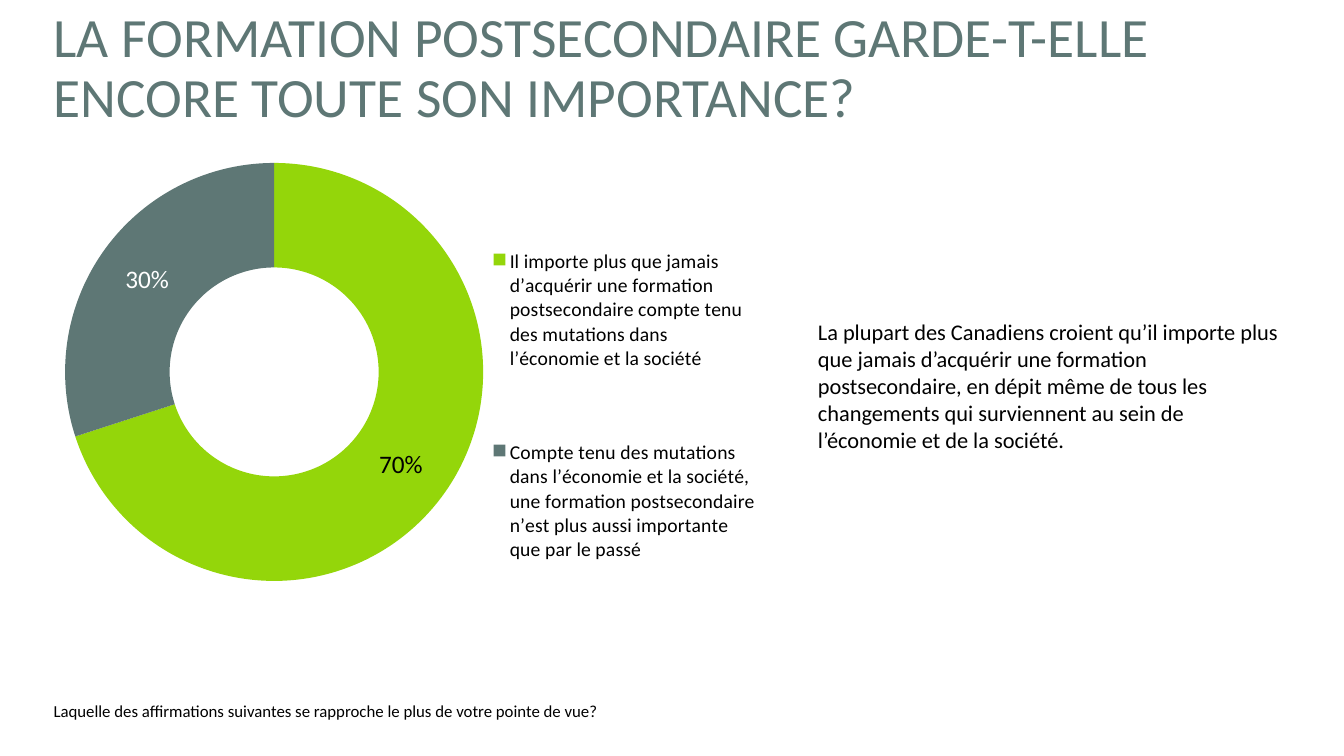
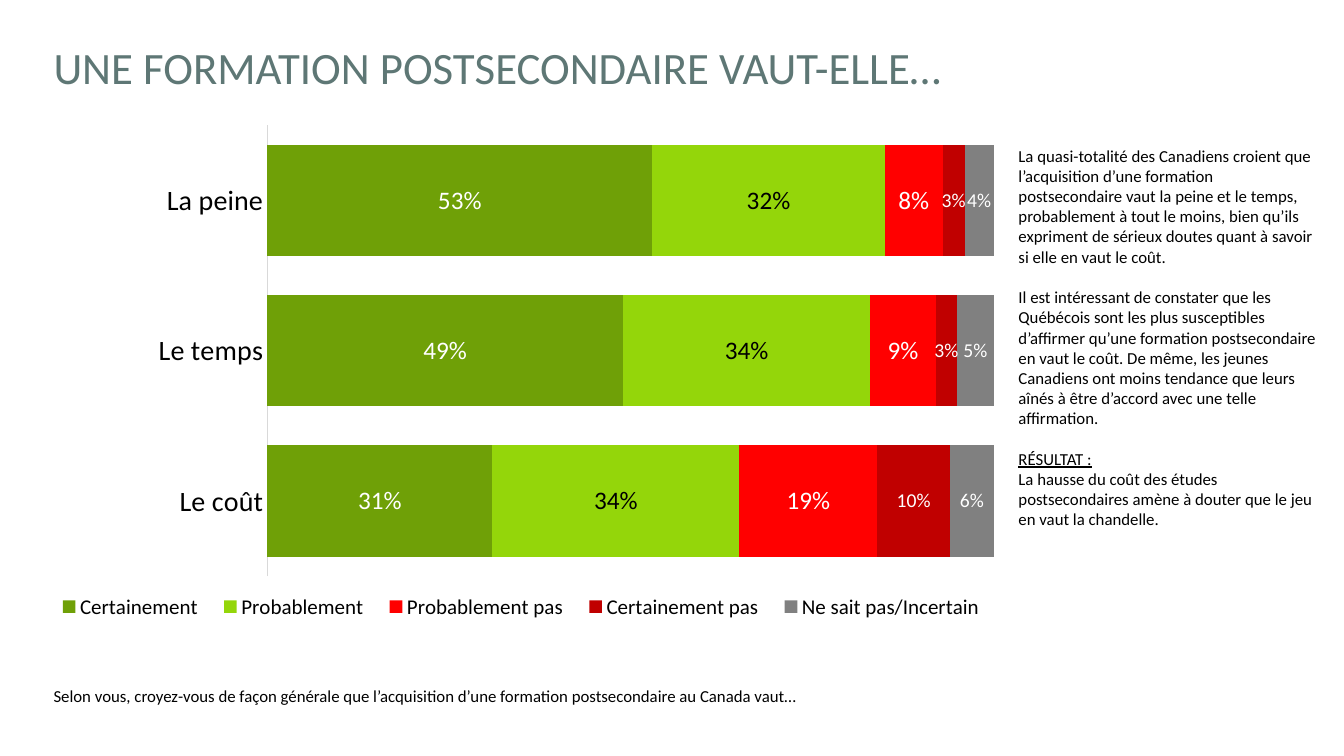
from lxml import etree
from pptx import Presentation
from pptx.chart.data import CategoryChartData as Data
from pptx.dml.color import RGBColor as Color
from pptx.enum.chart import XL_CHART_TYPE as Kind, XL_LEGEND_POSITION as Side, XL_TICK_MARK as Tick
from pptx.enum.text import MSO_ANCHOR as Anchor, MSO_AUTO_SIZE as Fit, PP_ALIGN as Align
from pptx.oxml.ns import qn
from pptx.util import Inches, Pt

FONT = "Calibri"
BLACK = Color(0x00, 0x00, 0x00)
WHITE = Color(0xFF, 0xFF, 0xFF)
SLATE = Color(0x5E, 0x77, 0x75)
LIME = Color(0x94, 0xD6, 0x0A)
GREEN = Color(0x6F, 0xA0, 0x07)
RED = Color(0xFF, 0x00, 0x00)
DARK = Color(0xC0, 0x00, 0x00)
GREY = Color(0x80, 0x80, 0x80)
PALE = Color(0xD9, 0xD9, 0xD9)

WIDE, HIGH = Inches(13.33), Inches(7.5)
EDGE = 3.23  # left margin, percent of the slide's width


def area(x, y, w, h):
    """Turn percents of the slide's size into lengths."""
    return [int(size * part / 100) for size, part in
            zip((WIDE, HIGH, WIDE, HIGH), (x, y, w, h))]


def move(shape, spot):
    shape.left, shape.top, shape.width, shape.height = area(*spot)


def style(font, size, color=BLACK):
    font.name, font.size, font.color.rgb = FONT, Pt(size), color


def write(frame, *texts, size=12, color=BLACK, anchor=Anchor.TOP, fit=Fit.NONE,
          line=1, gaps=(), under=()):
    """Fill a frame; gaps and under hold the indexes of spaced and underlined paragraphs."""
    frame.word_wrap, frame.auto_size, frame.vertical_anchor = True, fit, anchor
    for i, text in enumerate(texts):
        para = frame.paragraphs[0] if i == 0 else frame.add_paragraph()
        props = para._p.get_or_add_pPr()
        props.set("marL", "0")
        props.set("indent", "0")
        etree.SubElement(props, qn("a:buNone"))
        para.alignment, para.line_spacing = Align.LEFT, line
        para.space_before = Pt(1.22 * size if i in gaps else 0)
        run = para.add_run()
        run.text = text
        style(run.font, size, color)
        if i in under:
            run.font.underline = True


def start(deck, title, size, query, top, tall):
    """Add a slide with its title and, at the foot, the survey question."""
    slide = deck.slides.add_slide(deck.slide_layouts[1])
    head, foot = slide.placeholders
    move(head, (EDGE, 2.4, 95.42, 13.6))
    write(head.text_frame, title, size=size, color=SLATE, anchor=Anchor.MIDDLE, line=0.9)
    move(foot, (EDGE, top, 74.79, tall))
    write(foot.text_frame, query, anchor=Anchor.MIDDLE, line=0.9)
    return slide


def note(slide, spot, *texts, **form):
    box = slide.shapes.add_textbox(*area(*spot))
    write(box.text_frame, *texts, fit=Fit.SHAPE_TO_FIT_TEXT, **form)


def inset(part, spot, inner=False):
    """Fix the place of a plot area or legend, in percents of the chart's size."""
    for old in part.findall(qn("c:layout")):
        part.remove(old)
    frame = etree.Element(qn("c:layout"))
    rule = etree.SubElement(frame, qn("c:manualLayout"))
    rows = [("layoutTarget", "inner")] if inner else []
    rows += [("xMode", "edge"), ("yMode", "edge")]
    rows += [(tag, round(val / 100, 4)) for tag, val in zip("xywh", spot)]
    for tag, val in rows:
        etree.SubElement(rule, qn(f"c:{tag}")).set("val", str(val))
    mark = part.find(qn("c:legendPos"))
    part.insert(0 if mark is None else part.index(mark) + 1, frame)


def graph(slide, kind, spot, cats, rows, side, size, plot, key):
    """Add a chart; plot and key place its plot area and its legend."""
    data = Data(number_format="General")
    data.categories = cats
    for name, vals in rows:
        data.add_series(name, vals)
    chart = slide.shapes.add_chart(kind, *area(*spot), data).chart
    style(chart.font, 18)
    chart.has_title, chart.has_legend = False, True
    chart.legend.position, chart.legend.include_in_layout = side, False
    style(chart.legend.font, size)
    root = chart._chartSpace.chart
    inset(root.plotArea, plot, inner=True)
    inset(root.find(qn("c:legend")), key)
    return chart


def paint(part, color):
    part.format.fill.solid()
    part.format.fill.fore_color.rgb = color


def label(row, size, color, share=False):
    marks = row.data_labels
    marks.show_value, marks.show_percentage = not share, share
    marks.number_format, marks.number_format_is_linked = "0%", False
    style(marks.font, size, color)


def ring(slide, spot, cats, vals, hues):
    chart = graph(slide, Kind.DOUGHNUT, spot, cats, [("Series 1", vals)], Side.RIGHT, 14,
                  plot=(2.04, 9.83, 58.35, 80.38), key=(62, 13, 37, 87))
    row = chart.plots[0].series[0]
    label(row, 18, WHITE, share=True)
    for i, hue in enumerate(hues):
        paint(row.points[i], hue)
    style(row.points[0].data_label.font, 18)
    mark = row._element.find(".//" + qn("c:dLbl"))
    mark.find(qn("c:showVal")).set("val", "0")
    mark.find(qn("c:showPercent")).set("val", "1")


def bars(slide, spot, cats, rows):
    chart = graph(slide, Kind.BAR_STACKED_100, spot, cats, [row[:2] for row in rows],
                  Side.BOTTOM, 15, plot=(23.2, 3.1, 75.3, 86.1), key=(0, 90, 99, 10))
    plot = chart.plots[0]
    plot.gap_width, plot.overlap, plot.vary_by_categories = 35, 100, False
    for row, (_, _, hue, size, ink) in zip(plot.series, rows):
        paint(row, hue)
        label(row, size, ink)
    axis = chart.category_axis
    axis.reverse_order = True
    axis.major_tick_mark = axis.minor_tick_mark = Tick.NONE
    axis.format.line.color.rgb, axis.format.line.width = PALE, Pt(0.75)
    style(axis.tick_labels.font, 20)
    chart.value_axis.has_major_gridlines = False
    chart.value_axis.visible = False


def worth(deck):
    slide = start(deck, "LA FORMATION POSTSECONDAIRE GARDE-T-ELLE ENCORE TOUTE SON IMPORTANCE?", 39.6,
                  "Laquelle des affirmations suivantes se rapproche le plus de votre pointe de vue?",
                  89.33, 9.73)
    ring(slide, (3.75, 14.8, 53.34, 68.8),
         ("Il importe plus que jamais d’acquérir une formation postsecondaire compte tenu "
          "des mutations dans l’économie et la société",
          "Compte tenu des mutations dans l’économie et la société, une formation "
          "postsecondaire n’est plus aussi importante que par le passé"),
         (70, 30), (LIME, SLATE))
    note(slide, (60.12, 41.47, 36.08, 15.73),
         "La plupart des Canadiens croient qu’il importe plus que jamais d’acquérir une formation "
         "postsecondaire, en dépit même de tous les changements qui surviennent au sein de "
         "l’économie et de la société.", size=16)


def value(deck):
    slide = start(deck, "UNE FORMATION POSTSECONDAIRE VAUT-ELLE…", 32,
                  "Selon vous, croyez-vous de façon générale que l’acquisition d’une formation "
                  "postsecondaire au Canada vaut…", 85.4, 13.6)
    bars(slide, (EDGE, 14.4, 71.79, 69.33), ("La peine", "Le temps", "Le coût"), (
        ("Certainement", (0.53, 0.49, 0.31), GREEN, 18, WHITE),
        ("Probablement", (0.32, 0.34, 0.34), LIME, 18, BLACK),
        ("Probablement pas", (0.08, 0.09, 0.19), RED, 18, WHITE),
        ("Certainement pas", (0.03, 0.03, 0.1), DARK, 14, WHITE),
        ("Ne sait pas/Incertain", (0.04, 0.05, 0.06), GREY, 14, WHITE)))
    note(slide, (75.04, 18.6, 23.63, 47.07),
         "La quasi-totalité des Canadiens croient que l’acquisition d’une formation postsecondaire "
         "vaut la peine et le temps, probablement à tout le moins, bien qu’ils expriment de sérieux "
         "doutes quant à savoir si elle en vaut le coût.",
         "Il est intéressant de constater que les Québécois sont les plus susceptibles d’affirmer "
         "qu’une formation postsecondaire en vaut le coût. De même, les jeunes Canadiens ont moins "
         "tendance que leurs aînés à être d’accord avec une telle affirmation.",
         "RÉSULTAT :",
         "La hausse du coût des études postsecondaires amène à douter que le jeu en vaut la chandelle.",
         gaps=(1, 2), under=(2,))


def main():
    deck = Presentation()
    deck.slide_width, deck.slide_height = WIDE, HIGH
    worth(deck)
    value(deck)
    deck.save("out.pptx")


if __name__ == "__main__":
    main()
